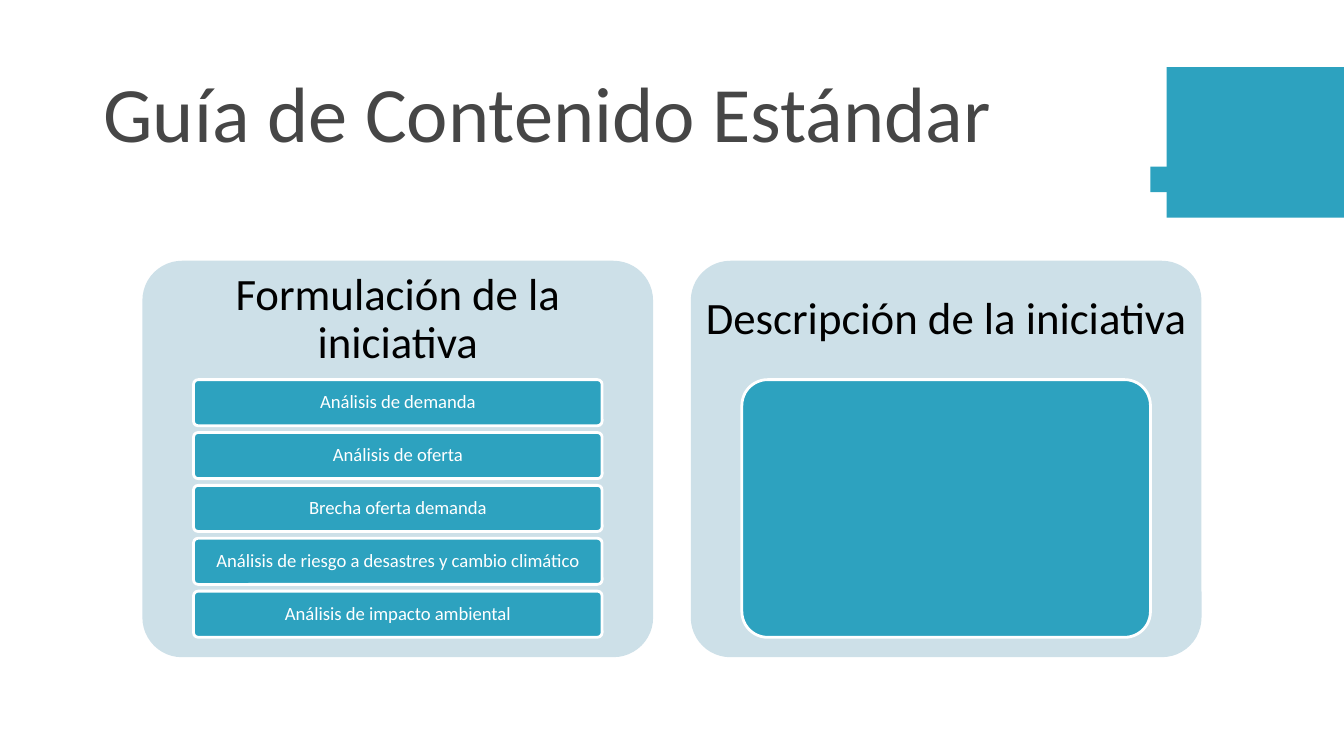
import pptx
import pptx.util
import pptx.dml.color
import pptx.enum.shapes
import pptx.enum.text

RGBColor = pptx.dml.color.RGBColor
TEAL = RGBColor(0x2D, 0xA2, 0xBF)
PALE = RGBColor(0xCD, 0xE0, 0xE8)
GREY = RGBColor(0x46, 0x46, 0x46)
WHITE = RGBColor(0xFF, 0xFF, 0xFF)
BLACK = RGBColor(0, 0, 0)

Inches = pptx.util.Inches
SHAPE = pptx.enum.shapes.MSO_SHAPE
ALIGN = pptx.enum.text.PP_ALIGN
ANCHOR = pptx.enum.text.MSO_ANCHOR


def write(sp, text, size, color, align=ALIGN.CENTER, anchor=ANCHOR.MIDDLE,
          inset=(0.1, 0.05), spacing=0.9):
    tf = sp.text_frame
    tf.word_wrap = True
    tf.auto_size = pptx.enum.text.MSO_AUTO_SIZE.NONE
    tf.vertical_anchor = anchor
    tf.margin_left = tf.margin_right = Inches(inset[0])
    tf.margin_top = tf.margin_bottom = Inches(inset[1])
    p = tf.paragraphs[0]
    p.alignment = align
    p.line_spacing = spacing
    r = p.add_run()
    r.text = text
    r.font.name = "Calibri"
    r.font.size = pptx.util.Pt(size)
    r.font.color.rgb = color


def box(kind, x, y, w, h, fill, line=None):
    sp = s.shapes.add_shape(kind, Inches(x), Inches(y), Inches(w), Inches(h))
    sp.shadow.inherit = False
    sp.fill.solid()
    sp.fill.fore_color.rgb = fill
    if kind == SHAPE.ROUNDED_RECTANGLE:
        sp.adjustments[0] = 0.1
    if line is None:
        sp.line.fill.background()
    else:
        sp.line.color.rgb = line
        sp.line.width = pptx.util.Pt(1.5)
    return sp


# A 16:9 slide
prs = pptx.Presentation()
prs.slide_width, prs.slide_height = Inches(10), Inches(10 * 9 / 16)
s = prs.slides.add_slide(prs.slide_layouts[5])

# Corner decoration
box(SHAPE.RECTANGLE, 8.56, 1.24, 1.44, 0.19, TEAL)
box(SHAPE.RECTANGLE, 8.68, 0.5, 1.32, 1.12, TEAL)

# Title
title = s.shapes.title
title.left, title.top = Inches(0.67), Inches(0.13)
title.width, title.height = Inches(8.92), Inches(1.1)
write(title, "Guía de Contenido Estándar", 42, GREY, align=ALIGN.LEFT,
      anchor=ANCHOR.BOTTOM, spacing=1.0)

# Two panels: heading over a stack of bars that shares one body height
LEFT, TOP, PANEL_W, PANEL_H, PITCH = 1.06, 1.94, 3.8, 2.95, 4.08
HEAD_H, BODY_H, GAP = 0.3 * PANEL_H, 0.65 * PANEL_H, 0.05
BAR_W = 0.8 * PANEL_W
panels = [
    ("Formulación de la iniciativa", [
        "Análisis de demanda",
        "Análisis de oferta",
        "Brecha oferta demanda",
        "Análisis de riesgo a desastres y cambio climático",
        "Análisis de impacto ambiental",
    ]),
    ("Descripción de la iniciativa", [""]),
]
for col, (heading, items) in enumerate(panels):
    x = LEFT + col * PITCH
    box(SHAPE.ROUNDED_RECTANGLE, x, TOP, PANEL_W, PANEL_H, PALE)
    head = s.shapes.add_textbox(Inches(x), Inches(TOP), Inches(PANEL_W), Inches(HEAD_H))
    write(head, heading, 24, BLACK, inset=(0.1, 0.1))

    bar_h = (BODY_H - GAP * (len(items) - 1)) / len(items)
    for row, item in enumerate(items):
        y = TOP + HEAD_H + row * (bar_h + GAP)
        bar = box(SHAPE.ROUNDED_RECTANGLE, x + (PANEL_W - BAR_W) / 2, y,
                  BAR_W, bar_h, TEAL, line=WHITE)
        if item:
            write(bar, item, 10, WHITE, inset=(0.03, 0.02))

prs.save("out.pptx")
